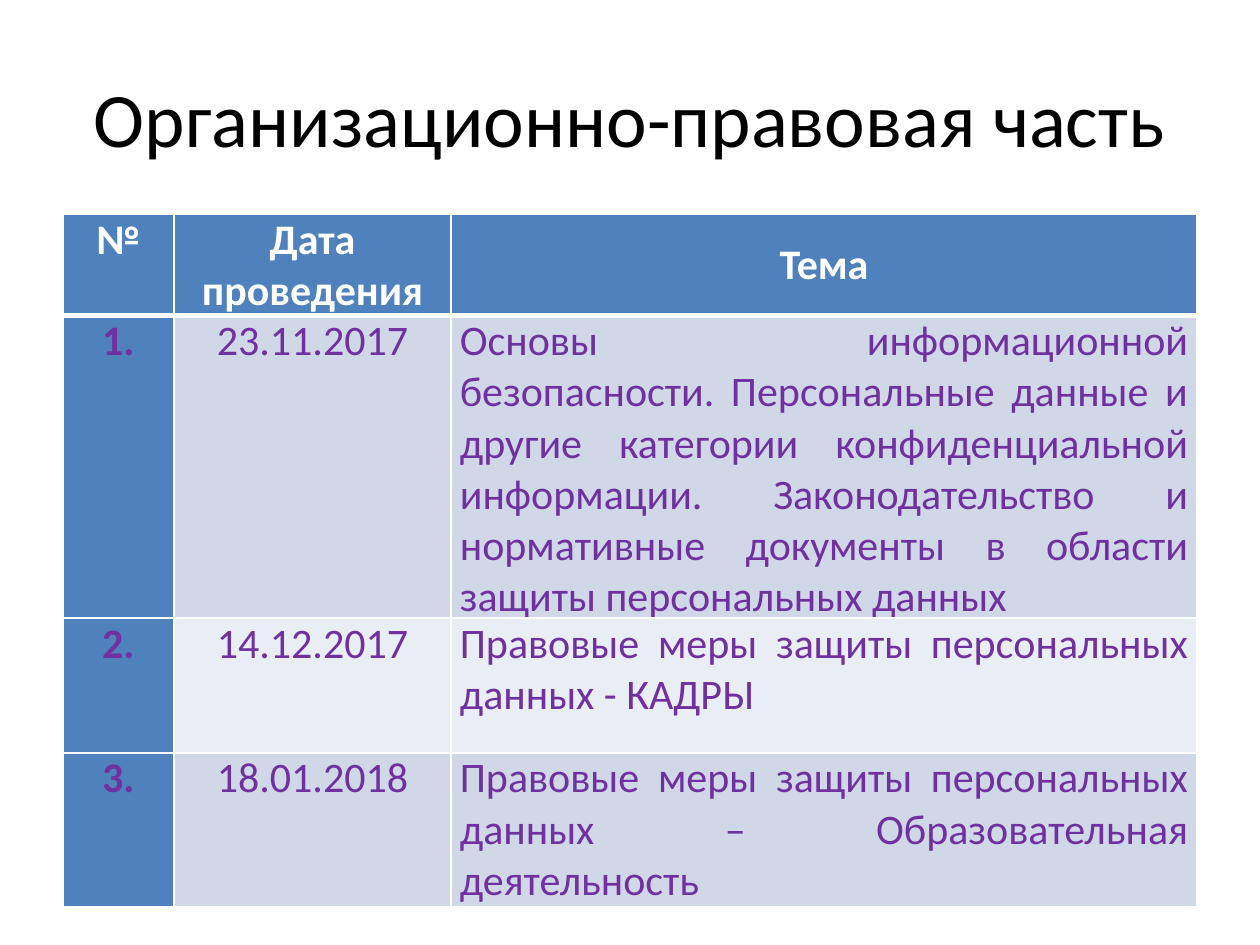
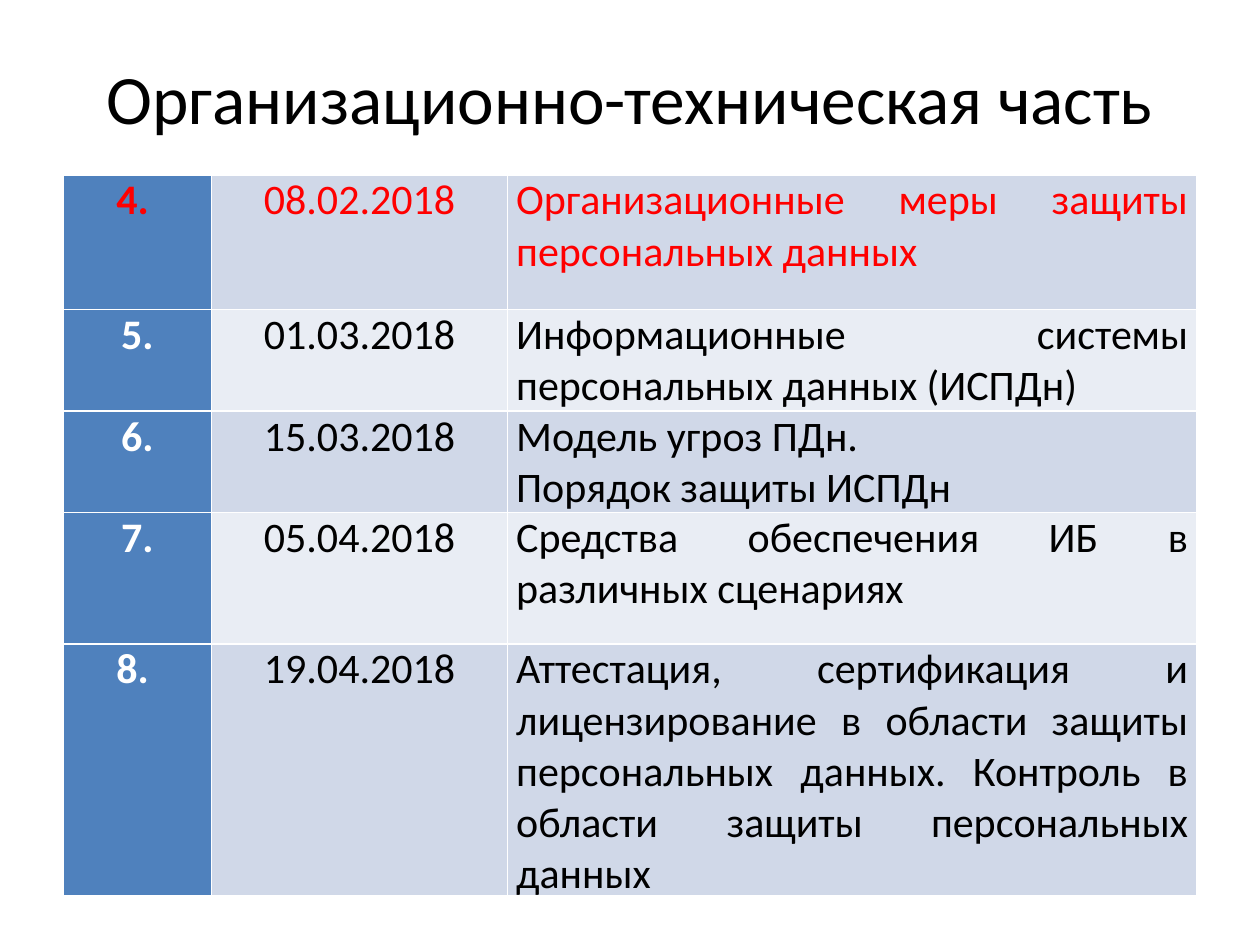
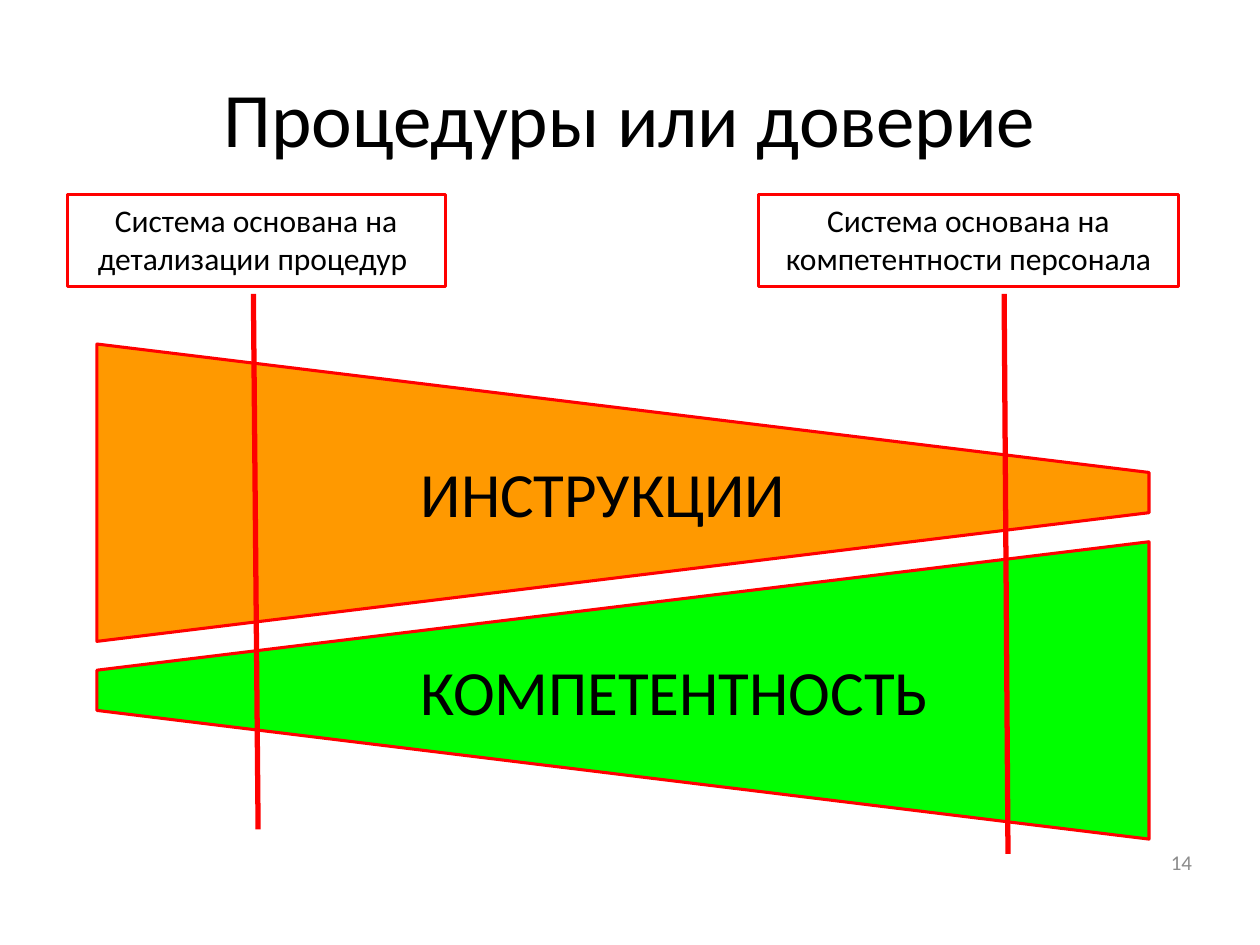
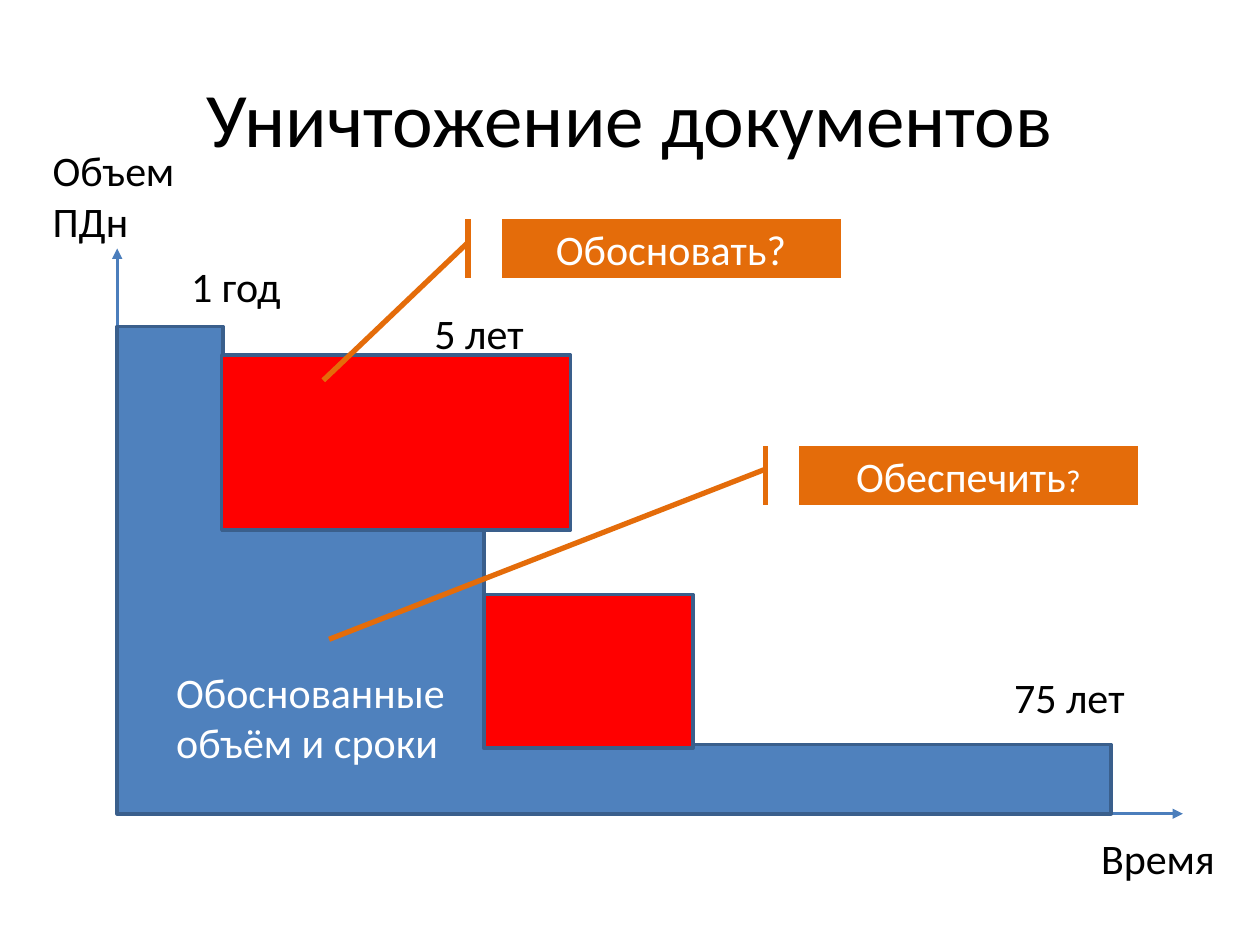
from dataclasses import dataclass
from typing import NamedTuple

from lxml.etree import SubElement
from pptx import Presentation
from pptx.dml.color import RGBColor as RGB
from pptx.enum.shapes import MSO_CONNECTOR as Connector, MSO_SHAPE as Preset
from pptx.enum.text import MSO_ANCHOR as Anchor, PP_ALIGN as Align
from pptx.oxml.ns import qn
from pptx.util import Pt


@dataclass(frozen=True)
class Theme:
    font: str = "Calibri"
    black: str = "000000"
    white: str = "FFFFFF"
    red: str = "FF0000"
    purple: str = "7030A0"
    gray: str = "8C8C8C"
    blue: str = "4F81BD"
    axis: str = "4B7EBC"
    edge: str = "3A5F8C"
    orange: str = "E46C0A"
    amber: str = "FF9900"
    green: str = "00FF00"
    bands: tuple[str, str] = ("D0D8E8", "E9EDF4")
    title: float = 44
    title_small: float = 39.6
    wedge: float = 36
    body: float = 24
    note: float = 18
    number: float = 12


THEME = Theme()


class Box(NamedTuple):
    left: float
    top: float
    width: float
    height: float


class Point(NamedTuple):
    x: float
    y: float


class Margins(NamedTuple):
    left: float = 7.2
    top: float = 3.6
    right: float = 7.2
    bottom: float = 3.6


class Session(NamedTuple):
    number: str
    date: str
    topic: str
    color: str
    number_color: str
    height: float


class Wedge(NamedTuple):
    text: str
    fill: str
    left_top: float
    left_bottom: float
    right_top: float
    right_bottom: float


class Principle(NamedTuple):
    text: str
    box: Box
    start: Point
    end: Point


class Label(NamedTuple):
    text: str
    box: Box
    color: str = THEME.black


class Callout(NamedTuple):
    text: str
    tail: str
    tail_size: float
    box: Box
    target: Point


CELL_MARGINS = Margins(5, 0, 5, 0)
NOTE_MARGINS = Margins(1.44, 3.6, 1.44, 3.6)
TITLE_BOX = Box(36, 21.6, 648, 90)


def emu(values) -> list[int]:
    return [Pt(value) for value in values]


def add_run(paragraph, text: str, size: float, color: str, bold: bool) -> None:
    run = paragraph.add_run()
    run.text = text
    run.font.name = THEME.font
    run.font.size = Pt(size)
    run.font.bold = bold
    run.font.color.rgb = RGB.from_string(color)


def write(frame, text: str, *, size: float = THEME.body, color: str = THEME.black,
          bold: bool = False, align=Align.LEFT, anchor=Anchor.TOP,
          margins: Margins = Margins(), tail: str = "",
          tail_size: float = THEME.body) -> None:
    frame.word_wrap = True
    frame.vertical_anchor = anchor
    (frame.margin_left, frame.margin_top,
     frame.margin_right, frame.margin_bottom) = emu(margins)
    for index, line in enumerate(text.split("\n")):
        paragraph = frame.add_paragraph() if index else frame.paragraphs[0]
        paragraph.alignment = align
        add_run(paragraph, line, size, color, bold)
    if tail:
        add_run(paragraph, tail, tail_size, color, bold)


def add_label(slide, text: str, box: Box, **style) -> None:
    write(slide.shapes.add_textbox(*emu(box)).text_frame, text, **style)


def paint(shape, fill: str | None, line: str, weight: float) -> None:
    shape.shadow.inherit = False
    if fill:
        shape.fill.solid()
        shape.fill.fore_color.rgb = RGB.from_string(fill)
    else:
        shape.fill.background()
    shape.line.color.rgb = RGB.from_string(line)
    shape.line.width = Pt(weight)


def add_preset(slide, preset, box: Box, fill: str | None, line: str, weight: float):
    shape = slide.shapes.add_shape(preset, *emu(box))
    paint(shape, fill, line, weight)
    return shape


def add_outline(slide, points: list[Point], fill: str, line: str, weight: float):
    first, *rest = [tuple(emu(point)) for point in points]
    builder = slide.shapes.build_freeform(*first, scale=1.0)
    builder.add_line_segments(rest, close=True)
    shape = builder.convert_to_shape()
    paint(shape, fill, line, weight)
    return shape


def add_line(slide, start: Point, end: Point, color: str, weight: float,
             arrow: bool = False) -> None:
    line = slide.shapes.add_connector(Connector.STRAIGHT, *emu(start), *emu(end))
    line.line.color.rgb = RGB.from_string(color)
    line.line.width = Pt(weight)
    if arrow:
        SubElement(line.line._get_or_add_ln(), qn("a:tailEnd"), type="triangle")
    SubElement(line._element.spPr, qn("a:effectLst"))


def add_page(deck, title: str, box: Box = TITLE_BOX, size: float = THEME.title):
    slide = deck.slides.add_slide(deck.slide_layouts[6])
    add_label(slide, title, box, size=size, align=Align.CENTER, anchor=Anchor.MIDDLE)
    return slide


def border_cell(cell, bottom: float) -> None:
    properties = cell._tc.get_or_add_tcPr()
    weights = {"lnL": 1, "lnR": 1, "lnT": 1, "lnB": bottom}
    for index, (side, weight) in enumerate(weights.items()):
        line = properties.makeelement(qn(f"a:{side}"), {"w": str(Pt(weight))})
        fill = SubElement(line, qn("a:solidFill"))
        SubElement(fill, qn("a:srgbClr"), val=THEME.white)
        properties.insert(index, line)


def fill_cell(cell, text: str, fill: str, bottom: float = 1, **style) -> None:
    anchor = style.pop("anchor", Anchor.TOP)
    write(cell.text_frame, text, anchor=None, **style)
    cell.vertical_anchor = anchor
    (cell.margin_left, cell.margin_top,
     cell.margin_right, cell.margin_bottom) = emu(CELL_MARGINS)
    cell.fill.solid()
    cell.fill.fore_color.rgb = RGB.from_string(fill)
    border_cell(cell, bottom)


def add_schedule(slide, top: float, widths: list[float], sessions: list[Session],
                 header: tuple[str, ...] = (), header_height: float = 58) -> None:
    offset = 1 if header else 0
    heights = [header_height] * offset + [session.height for session in sessions]
    box = Box(36, top, sum(widths), sum(heights))
    table = slide.shapes.add_table(len(heights), len(widths), *emu(box)).table
    table.first_row = bool(header)
    table.first_col = True
    for column, width in zip(table.columns, widths):
        column.width = Pt(width)
    for row, height in zip(table.rows, heights):
        row.height = Pt(height)
    for column, heading in enumerate(header):
        fill_cell(table.cell(0, column), heading, THEME.blue, bottom=3,
                  color=THEME.white, bold=True, align=Align.CENTER,
                  anchor=Anchor.MIDDLE if column else Anchor.TOP)
    for index, session in enumerate(sessions):
        row, band = index + offset, THEME.bands[index % 2]
        fill_cell(table.cell(row, 0), session.number, THEME.blue,
                  color=session.number_color, bold=True, align=Align.CENTER)
        fill_cell(table.cell(row, 1), session.date, band,
                  color=session.color, align=Align.CENTER)
        fill_cell(table.cell(row, 2), session.topic, band,
                  color=session.color, align=Align.JUSTIFY)


def build_legal_part(deck) -> None:
    slide = add_page(deck, "Организационно-правовая часть")
    past = (THEME.purple, THEME.purple)
    sessions = [
        Session("1.", "23.11.2017",
                "Основы информационной безопасности. Персональные данные и другие "
                "категории конфиденциальной информации. Законодательство и "
                "нормативные документы в области защиты персональных данных",
                *past, 170),
        Session("2.", "14.12.2017",
                "Правовые меры защиты персональных данных - КАДРЫ", *past, 77),
        Session("3.", "18.01.2018",
                "Правовые меры защиты персональных данных – Образовательная "
                "деятельность", *past, 88),
    ]
    add_schedule(slide, 122.4, [63.4, 158.4, 426.2], sessions,
                 ("№", "Дата проведения", "Тема"))


def build_technical_part(deck) -> None:
    slide = add_page(deck, "Организационно-техническая часть",
                     TITLE_BOX._replace(height=67), THEME.title_small)
    current = (THEME.red, THEME.red)
    future = (THEME.black, THEME.white)
    sessions = [
        Session("4. ", "08.02.2018",
                "Организационные меры защиты персональных данных", *current, 77),
        Session("5.", "01.03.2018",
                "Информационные системы персональных данных (ИСПДн)", *future, 58),
        Session("6.", "15.03.2018",
                "Модель угроз ПДн.\nПорядок защиты ИСПДн", *future, 58),
        Session("7.", "05.04.2018",
                "Средства обеспечения ИБ в различных сценариях ", *future, 75),
        Session("8. ", "19.04.2018",
                "Аттестация, сертификация и лицензирование в области защиты "
                "персональных данных. Контроль в области защиты персональных данных",
                *future, 143),
    ]
    add_schedule(slide, 100, [85, 169, 394], sessions)


def build_trust(deck) -> None:
    slide = add_page(deck, "Процедуры или доверие")
    add_label(slide, "14", Box(620.6, 478, 67.7, 28.8), size=THEME.number,
              color=THEME.gray, align=Align.RIGHT, anchor=Anchor.MIDDLE)
    left, right = 55.4, 656.6
    wedges = [
        Wedge("ИНСТРУКЦИИ", THEME.amber, 196.6, 366.5, 270, 293),
        Wedge("КОМПЕТЕНТНОСТЬ", THEME.green, 383, 406, 309.6, 479.5),
    ]
    for wedge in wedges:
        corners = [Point(left, wedge.left_top), Point(right, wedge.right_top),
                   Point(right, wedge.right_bottom), Point(left, wedge.left_bottom)]
        shape = add_outline(slide, corners, wedge.fill, THEME.red, 1.75)
        write(shape.text_frame, wedge.text, size=THEME.wedge, anchor=Anchor.MIDDLE,
              margins=Margins(left=185))
    principles = [
        Principle("Система основана на компетентности персонала",
                  Box(433.4, 111.4, 240, 52.6), Point(573.8, 168), Point(576, 488)),
        Principle("Система основана на детализации процедур ",
                  Box(38.4, 111.4, 216, 52.6), Point(144.8, 168), Point(147.5, 474)),
    ]
    for principle in principles:
        add_line(slide, principle.start, principle.end, THEME.red, 3)
        frame = add_preset(slide, Preset.RECTANGLE, principle.box, None,
                           THEME.red, 1.75).text_frame
        write(frame, principle.text, size=THEME.note, align=Align.CENTER,
              margins=NOTE_MARGINS)


def build_destruction(deck) -> None:
    slide = add_page(deck, "Уничтожение документов")
    origin = Point(67, 465)
    for tip in (Point(origin.x, 142), Point(676, origin.y)):
        add_line(slide, origin, tip, THEME.axis, 1.5, arrow=True)

    corners = [Point(origin.x, 186.5)]
    steps = [Point(127.4, 303), Point(276.5, 425.5), Point(635, origin.y)]
    for step in steps:
        corners += [Point(step.x, corners[-1].y), step]
    add_outline(slide, corners + [origin], THEME.blue, THEME.edge, 2)

    labels = [
        Label("1 год", Box(102.2, 145.4, 77.8, 36)),
        Label("5 лет", Box(241.2, 172.1, 89.3, 36)),
        Label("75 лет", Box(572.4, 380.2, 93.6, 36)),
        Label("Объем ПДн", Box(23, 79.2, 87.1, 65.5)),
        Label("Время", Box(622.1, 472.3, 87.1, 36)),
    ]
    for label in labels:
        add_label(slide, label.text, label.box, color=label.color)

    for excess in (Box(276.5, 339.8, 119.5, 87.8), Box(126.7, 203, 199.4, 100)):
        add_preset(slide, Preset.RECTANGLE, excess, THEME.red, THEME.edge, 2)

    callouts = [
        Callout("Обосновать?", "", THEME.body,
                Box(286.6, 125.3, 193.7, 33.8), Point(-0.526, 2.725)),
        Callout("Обеспечить", "?", THEME.note,
                Box(456.5, 254.9, 193.7, 33.8), Point(-1.386, 3.27)),
    ]
    for callout in callouts:
        shape = add_preset(slide, Preset.LINE_CALLOUT_1_ACCENT_BAR, callout.box,
                           THEME.orange, THEME.orange, 3)
        bends = (0.393, -0.099, callout.target.y, callout.target.x)
        for index, bend in enumerate(bends):
            shape.adjustments[index] = bend
        write(shape.text_frame, callout.text, color=THEME.white, align=Align.CENTER,
              anchor=Anchor.MIDDLE, tail=callout.tail, tail_size=callout.tail_size)

    add_label(slide, "Обоснованные объём и сроки", Box(93.6, 377.3, 193, 65.5),
              color=THEME.white)


def main() -> None:
    deck = Presentation()
    deck.slide_width, deck.slide_height = Pt(720), Pt(540)
    for build in (build_legal_part, build_technical_part, build_trust,
                  build_destruction):
        build(deck)
    deck.save("out.pptx")


if __name__ == "__main__":
    main()
